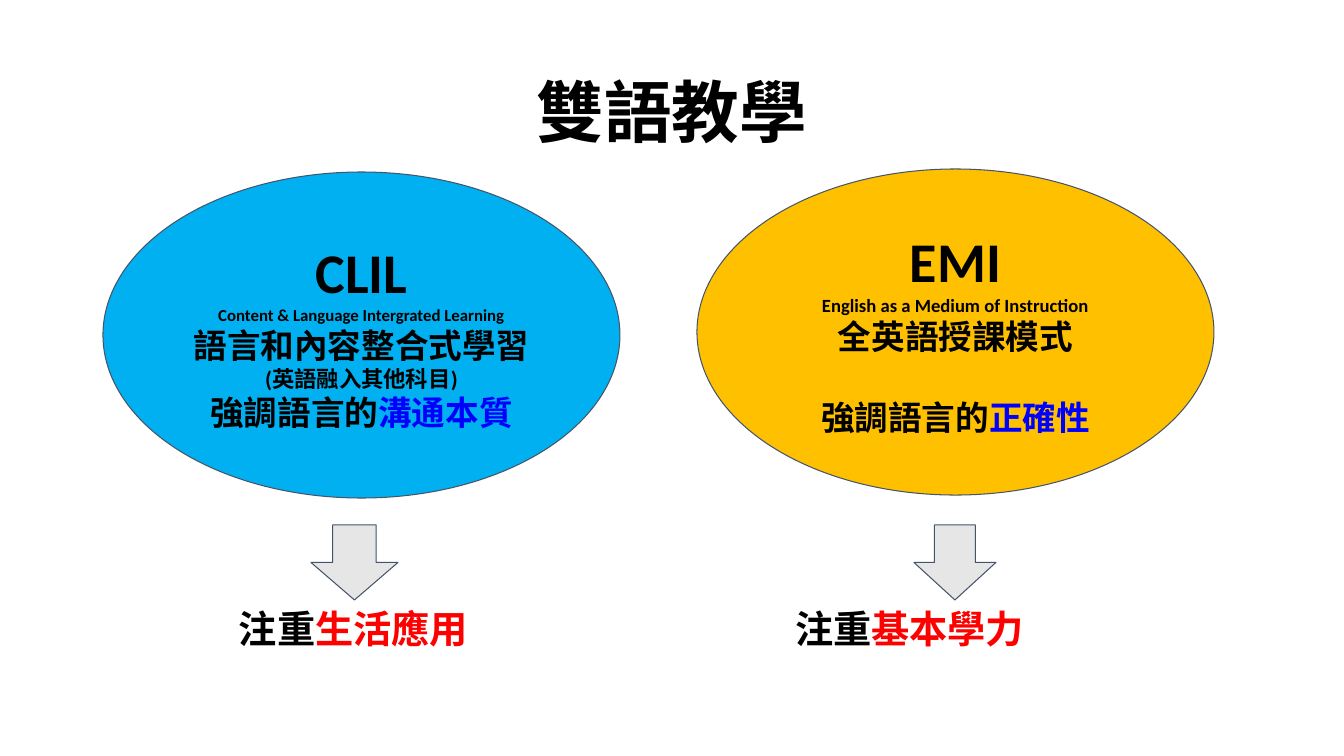
import pptx
import pptx.util
import pptx.dml.color
import pptx.enum.shapes
import pptx.enum.text
import pptx.oxml
import pptx.oxml.ns

PX = 914400 / 100.8
SHAPES = pptx.enum.shapes.MSO_SHAPE
ANCHOR = pptx.enum.text.MSO_ANCHOR
CENTER = pptx.enum.text.PP_ALIGN.CENTER
BLACK, BLUE, RED = "000000", "0000FF", "FF0000"


def rgb(hex_color):
    return pptx.dml.color.RGBColor.from_string(hex_color)


def write(paragraph, size, pieces):
    for text, color in pieces:
        run = paragraph.add_run()
        run.text = text
        run.font.name = "Calibri"
        run.font.size = pptx.util.Pt(size)
        run.font.bold = True
        run.font.color.rgb = rgb(color)


# Slide with a title and two content placeholders
deck = pptx.Presentation()
deck.slide_width, deck.slide_height = round(1344 * PX), round(756 * PX)
slide = deck.slides.add_slide(deck.slide_layouts[3])
title, clil_outcome, emi_outcome = list(slide.placeholders)[:3]

# Title and the two outcomes
for holder, box, inset, anchor in [
    (title, (46, 66, 1252, 85), 13, ANCHOR.TOP),
    (clil_outcome, (239, 603, 300, 50), 0, ANCHOR.MIDDLE),
    (emi_outcome, (795, 603, 300, 50), 0, ANCHOR.MIDDLE),
]:
    holder.left, holder.top, holder.width, holder.height = [round(v * PX) for v in box]
    frame = holder.text_frame
    frame.auto_size = pptx.enum.text.MSO_AUTO_SIZE.NONE
    frame.vertical_anchor = anchor
    frame.margin_left = frame.margin_right = round(inset * PX)
    frame.margin_top = frame.margin_bottom = round(inset * PX)

heading = title.text_frame.paragraphs[0]
heading.alignment = CENTER
heading.line_spacing = 0.9
write(heading, 48.3, [("雙語教學", BLACK)])

for outcome, focus in [(clil_outcome, "生活應用"), (emi_outcome, "基本學力")]:
    paragraph = outcome.text_frame.paragraphs[0]
    paragraph.space_before = pptx.util.Pt(0)
    write(paragraph, 27.3, [("注重", BLACK), (focus, RED)])
    # No bullet or indent
    properties = paragraph._p.get_or_add_pPr()
    properties.set("marL", "0")
    properties.set("indent", "0")
    properties.append(pptx.oxml.parse_xml(f"<a:buNone {pptx.oxml.ns.nsdecls('a')}/>"))

# Teaching models: each line is size, space before, pieces
clil_lines = [
    (40, 0, [("CLIL", BLACK)]),
    (12, 0, [("Content & Language Intergrated Learning", BLACK)]),
    (24, 0, [("語言和內容整合式學習", BLACK)]),
    (16, 0, [("(英語融入其他科目)", BLACK)]),
    (24, 0, [("強調語言的", BLACK), ("溝通本質", BLUE)]),
]
emi_lines = [
    (40, 0, [("EMI", BLACK)]),
    (13.3, 0, [("English as a Medium of Instruction", BLACK)]),
    (24, 0, [("全英語授課模式", BLACK)]),
    (24, 29, [("強調語言的", BLACK), ("正確性", BLUE)]),
]

# Ovals, and the arrows down to the outcomes
for kind, box, fill, lines in [
    (SHAPES.FLOWCHART_CONNECTOR, (103, 172, 517, 326), "00B0F0", clil_lines),
    (SHAPES.OVAL, (697, 169, 517, 326), "FFC000", emi_lines),
    (SHAPES.DOWN_ARROW, (311, 525, 87, 75), "E7E6E6", []),
    (SHAPES.DOWN_ARROW, (914, 525, 82, 75), "E7E6E6", []),
]:
    figure = slide.shapes.add_shape(kind, *[round(v * PX) for v in box])
    figure.shadow.inherit = False
    figure.fill.solid()
    figure.fill.fore_color.rgb = rgb(fill)
    figure.line.color.rgb = rgb("44546A")
    figure.line.width = pptx.util.Pt(0.75)
    frame = figure.text_frame
    frame.word_wrap = True
    frame.vertical_anchor = ANCHOR.MIDDLE
    frame.margin_left = frame.margin_right = round(13 * PX)
    frame.margin_top = frame.margin_bottom = round(13 * PX)
    for number, (size, space, pieces) in enumerate(lines):
        paragraph = frame.add_paragraph() if number else frame.paragraphs[0]
        paragraph.alignment = CENTER
        paragraph.space_before = pptx.util.Pt(space)
        write(paragraph, size, pieces)

deck.save("out.pptx")
